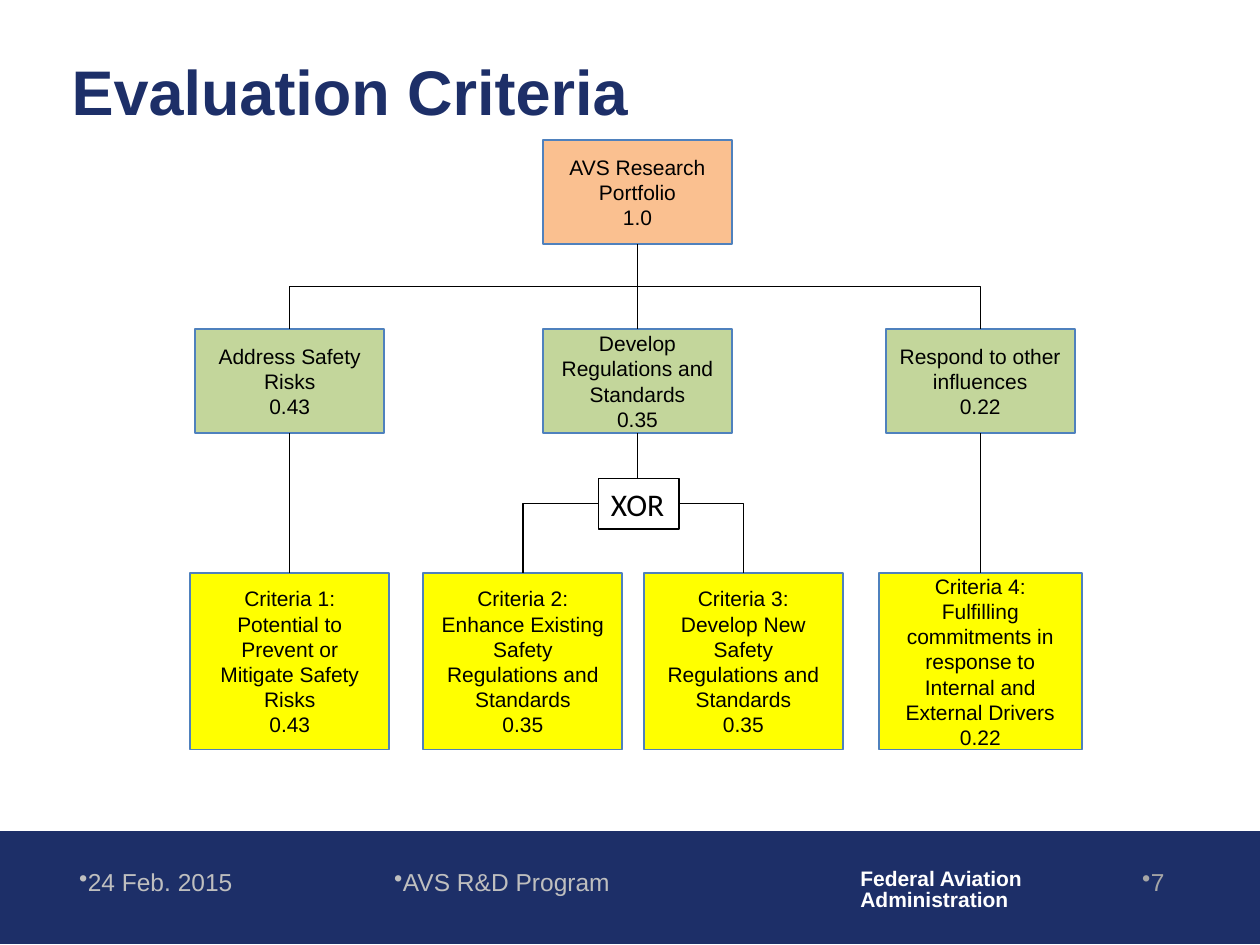
from lxml import etree
from pptx import Presentation
from pptx.dml.color import RGBColor
from pptx.enum.shapes import MSO_CONNECTOR, MSO_SHAPE
from pptx.enum.text import MSO_ANCHOR, PP_ALIGN
from pptx.oxml.ns import qn
from pptx.util import Inches, Pt

RECT = MSO_SHAPE.RECTANGLE
STRAIGHT, ELBOW = MSO_CONNECTOR.STRAIGHT, MSO_CONNECTOR.ELBOW
TOP, MIDDLE = MSO_ANCHOR.TOP, MSO_ANCHOR.MIDDLE
LEFT, CENTER, RIGHT = PP_ALIGN.LEFT, PP_ALIGN.CENTER, PP_ALIGN.RIGHT

NAVY = RGBColor(0x1D, 0x2F, 0x68)
BLUE = RGBColor(0x4F, 0x81, 0xBD)
ORANGE = RGBColor(0xFA, 0xC0, 0x90)
GREEN = RGBColor(0xC3, 0xD6, 0x9B)
YELLOW = RGBColor(0xFF, 0xFF, 0x00)
WHITE = RGBColor(0xFF, 0xFF, 0xFF)
BLACK = RGBColor(0, 0, 0)
SILVER = RGBColor(0xBF, 0xBF, 0xBF)
GRAY = RGBColor(0xA6, 0xA6, 0xA6)

LEFT_X, MID_X, RIGHT_X = 2.3, 5.06, 7.78
LEVELS = {
    "portfolio": (1.11, 0.83, ORANGE),
    "goal": (2.61, 0.83, GREEN),
    "criterion": (4.55, 1.4, YELLOW),
}
NODES = {
    "root": ("portfolio", MID_X, 1.5, ["AVS Research Portfolio", "1.0"]),
    "risks": ("goal", LEFT_X, 1.5, ["Address Safety Risks", "0.43"]),
    "rules": ("goal", MID_X, 1.5, ["Develop Regulations and Standards", "0.35"]),
    "other": ("goal", RIGHT_X, 1.5, ["Respond to other influences", "0.22"]),
    "c1": ("criterion", LEFT_X, 1.58,
           ["Criteria 1:\vPotential to Prevent or Mitigate Safety Risks", "0.43"]),
    "c2": ("criterion", 4.15, 1.58,
           ["Criteria 2:\vEnhance Existing Safety Regulations and Standards", "0.35"]),
    "c3": ("criterion", 5.9, 1.58,
           ["Criteria 3:\vDevelop New Safety Regulations and Standards", "0.35"]),
    "c4": ("criterion", RIGHT_X, 1.61,
           ["Criteria 4:\vFulfilling commitments in response to Internal and External Drivers",
            "0.22"]),
}
LINKS = [("root", "risks"), ("root", "rules"), ("root", "other"),
         ("risks", "c1"), ("rules", "c2"), ("rules", "c3"), ("other", "c4")]
FOOTERS = [
    ("24 Feb. 2015", 0.53, 1.83, LEFT, SILVER),
    ("AVS R&D Program", 2.4, 3.17, CENTER, SILVER),
    ("7", 8.38, 0.96, RIGHT, GRAY),
]


def write(s, lines, size, color, align=LEFT, anchor=TOP, font="Arial",
          bold=False, wrap=True, spacing=None, bullet=False):
    tf = s.text_frame
    tf.word_wrap = wrap
    tf.vertical_anchor = anchor
    for i, line in enumerate(lines):
        p = tf.paragraphs[0] if i == 0 else tf.add_paragraph()
        p.alignment = align
        if spacing:
            p.line_spacing = spacing
        if bullet:
            pPr = p._p.get_or_add_pPr()
            pPr.set("marL", "0")
            pPr.set("indent", "0")
            etree.SubElement(pPr, qn("a:buChar")).set("char", "•")
        for j, part in enumerate(line.split("\v")):
            if j:
                p.add_line_break()
            r = p.add_run()
            r.text = part
            r.font.name, r.font.size, r.font.bold = font, Pt(size), bold
            r.font.color.rgb = color


def add_box(x, y, w, h, fill, line, weight):
    s = slide.shapes.add_shape(RECT, Inches(x), Inches(y), Inches(w), Inches(h))
    s.shadow.inherit = False
    s.fill.solid()
    s.fill.fore_color.rgb = fill
    s.line.color.rgb = line
    s.line.width = Pt(weight)
    return s


def add_text(x, y, w, h, lines, size, color, **style):
    s = slide.shapes.add_textbox(Inches(x), Inches(y), Inches(w), Inches(h))
    write(s, lines, size, color, **style)


def add_link(parent, child):
    level, x1, _, _ = NODES[parent]
    top, height, _ = LEVELS[level]
    y1 = top + height
    x2, y2 = NODES[child][1], LEVELS[NODES[child][0]][0]
    if x1 == x2:
        c = slide.shapes.add_connector(STRAIGHT, Inches(x1), Inches(y1),
                                       Inches(x2), Inches(y2))
    else:
        cx, cy = (x1 + x2) / 2, (y1 + y2) / 2
        across, down = abs(x2 - x1) / 2, (y2 - y1) / 2
        side = 1 if x2 < x1 else -1
        c = slide.shapes.add_connector(
            ELBOW, Inches(cx - side * down), Inches(cy - across),
            Inches(cx + side * down), Inches(cy + across))
        quarter_turns = 1 if side == 1 else 3
        c._element.spPr.find(qn("a:xfrm")).set("rot", str(quarter_turns * 5400000))
    c.line.color.rgb = BLACK
    c.line.width = Pt(0.75)
    etree.SubElement(c._element.spPr, qn("a:effectLst"))


prs = Presentation()
prs.slide_width, prs.slide_height = Inches(10), Inches(7.5)
slide = prs.slides.add_slide(prs.slide_layouts[6])

add_box(0, 6.6, 10, 0.89, NAVY, NAVY, 0.75)
add_text(6.73, 6.85, 1.5, 0.44, ["Federal Aviation", "Administration"], 12, WHITE,
         bold=True, wrap=False, spacing=0.85)
for text, x, w, align, color in FOOTERS:
    add_text(x, 6.83, w, 0.5, [text], 14, color, align=align, bullet=True)

for level, center, w, lines in NODES.values():
    y, h, fill = LEVELS[level]
    node = add_box(center - w / 2, y, w, h, fill, BLUE, 1)
    write(node, lines, 12, BLACK, align=CENTER, anchor=MIDDLE)
for parent, child in LINKS:
    add_link(parent, child)

xor = add_box(4.75, 3.8, 0.64, 0.4, WHITE, BLACK, 0.75)
write(xor, ["XOR"], 18, BLACK, font="Calibri", wrap=False)
add_text(0.47, 0.38, 9.27, 0.67, ["Evaluation Criteria"], 36, NAVY,
         anchor=MIDDLE, bold=True)

prs.save("out.pptx")
